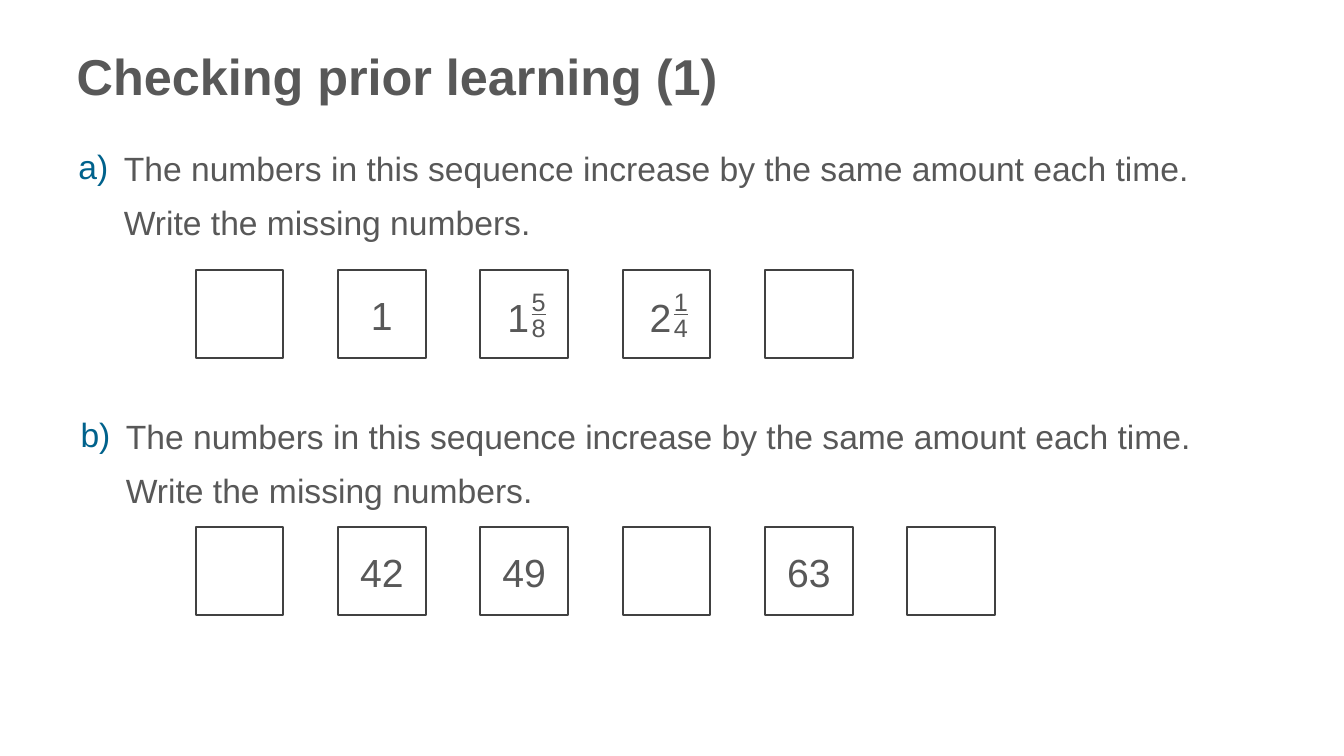
from pptx import Presentation
from pptx.dml.color import RGBColor
from pptx.enum.shapes import MSO_SHAPE as Shape
from pptx.enum.text import MSO_ANCHOR as Anchor, MSO_AUTO_SIZE as AutoSize, PP_ALIGN as Align
from pptx.util import Inches, Pt

FONT = "Arial"
GREY = RGBColor(0x58, 0x58, 0x58)
BLUE = RGBColor(0x00, 0x62, 0x8C)
OUTLINE = RGBColor(0x41, 0x41, 0x41)
WHITE = RGBColor(0xFF, 0xFF, 0xFF)

SQUARE = 0.87
PITCH = 1.412
SEQUENCE_LEFT = 1.94
INSTRUCTION = ("The numbers in this sequence increase by the same amount each time.",
               "Write the missing numbers.")


def write(frame, *lines, size=24, color=GREY, bold=None, align=Align.LEFT,
          spacing=1.05, gap=0, underline_first=False):
    """Fill a text frame with one paragraph per line, gap points apart."""
    for index, line in enumerate(lines):
        paragraph = frame.paragraphs[0] if index == 0 else frame.add_paragraph()
        paragraph.alignment = align
        paragraph.line_spacing = spacing
        paragraph.space_before = Pt(gap if index else 0)
        paragraph.space_after = Pt(0)
        run = paragraph.add_run()
        run.text = line
        run.font.name = FONT
        run.font.size = Pt(size)
        run.font.bold = bold
        run.font.color.rgb = color
        if underline_first:
            run.font.underline = index == 0


def add_text(slide, left, top, width, height, *lines, wrap=True, **text_format):
    box = slide.shapes.add_textbox(Inches(left), Inches(top), Inches(width), Inches(height))
    box.text_frame.word_wrap = wrap
    box.text_frame.auto_size = AutoSize.SHAPE_TO_FIT_TEXT
    write(box.text_frame, *lines, **text_format)


def add_title(slide, left, top, width, height, heading):
    title = slide.shapes.title
    title.left, title.top = Inches(left), Inches(top)
    title.width, title.height = Inches(width), Inches(height)
    title.text_frame.vertical_anchor = Anchor.TOP
    title.text_frame.word_wrap = True
    write(title.text_frame, heading, size=36, bold=True, spacing=0.9)


def add_question(slide, left, top, letter):
    add_text(slide, left + 0.45, top + 0.02, 11.68, 1.02, *INSTRUCTION, gap=8)
    add_text(slide, left, top, 0.58, 0.5, letter, color=BLUE)


def add_mixed_number(slide, left, top, whole, numerator, denominator):
    """Stack the fraction beside the whole number, inside the square at left, top."""
    add_text(slide, left + 0.41, top + 0.16, 0.34, 0.62, numerator, denominator,
             size=18, spacing=0.85, underline_first=True, wrap=False)
    add_text(slide, left + 0.17, top + 0.16, 0.34, 0.57, whole, size=28, align=Align.CENTER)


def add_sequence(slide, left, top, terms):
    """Draw a row of squares; a term is None, a number or a mixed number's three parts."""
    for index, term in enumerate(terms):
        square_left = left + index * PITCH
        square = slide.shapes.add_shape(Shape.RECTANGLE, Inches(square_left), Inches(top),
                                        Inches(SQUARE), Inches(SQUARE))
        square.shadow.inherit = False
        square.fill.solid()
        square.fill.fore_color.rgb = WHITE
        square.line.color.rgb = OUTLINE
        square.line.width = Pt(1.5)
        if isinstance(term, tuple):
            add_mixed_number(slide, square_left, top, *term)
        elif term:
            square.text_frame.vertical_anchor = Anchor.MIDDLE
            write(square.text_frame, term, size=28, align=Align.CENTER)


def main():
    deck = Presentation()
    deck.slide_width, deck.slide_height = Inches(13.33), Inches(7.5)
    slide = deck.slides.add_slide(deck.slide_layouts[5])
    add_title(slide, 0.66, 0.47, 12, 1.07, "Checking prior learning (1)")
    add_question(slide, 0.68, 1.38, "a)")
    add_sequence(slide, SEQUENCE_LEFT, 2.68,
                 [None, "1", ("1", "5", "8"), ("2", "1", "4"), None])
    add_question(slide, 0.7, 4.04, "b)")
    add_sequence(slide, SEQUENCE_LEFT, 5.23, [None, "42", "49", None, "63", None])
    deck.save("out.pptx")


if __name__ == "__main__":
    main()
